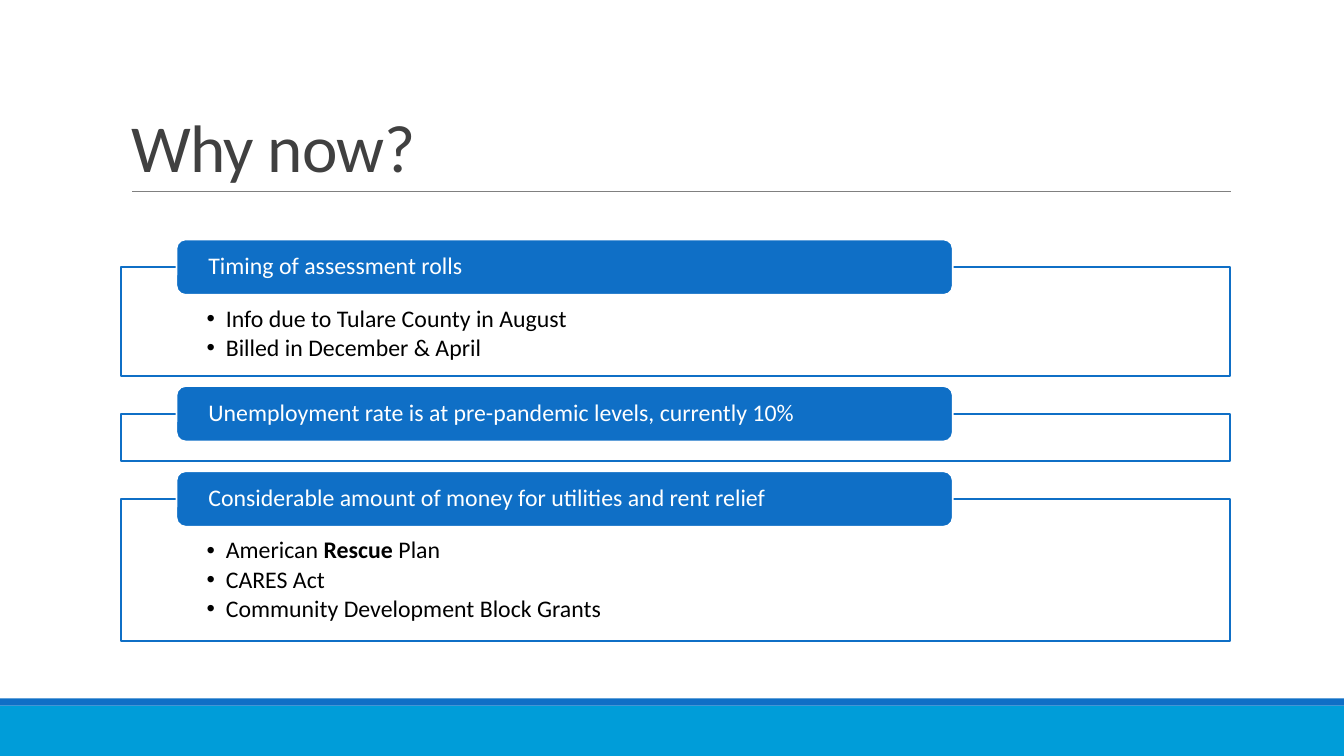
from lxml import etree
from pptx import Presentation
from pptx.dml.color import RGBColor
from pptx.enum.shapes import MSO_CONNECTOR, MSO_SHAPE
from pptx.enum.text import MSO_ANCHOR, MSO_AUTO_SIZE, PP_ALIGN
from pptx.oxml.ns import qn
from pptx.util import Inches, Pt

RECT, ROUND = MSO_SHAPE.RECTANGLE, MSO_SHAPE.ROUNDED_RECTANGLE
TOP, MIDDLE, BOTTOM = MSO_ANCHOR.TOP, MSO_ANCHOR.MIDDLE, MSO_ANCHOR.BOTTOM
LEFT = PP_ALIGN.LEFT

# Content: heading, frame height, bullets (text between asterisks is bold)
TITLE = "Why now?"
SECTIONS = [
    ("Timing of assessment rolls", 1.08,
     ["Info due to Tulare County in August", "Billed in December & April"]),
    ("Unemployment rate is at pre-pandemic levels, currently 10%", 0.47, []),
    ("Considerable amount of money for utilities and rent relief", 1.41,
     ["American *Rescue* Plan", "CARES Act",
      "Community Development Block Grants"]),
]
FONT = "Calibri"
BLUE, CYAN, WHITE, BLACK = "0F6FC6", "009DD9", "FFFFFF", "000000"
DARK, GRAY = "404040", "808080"

# Layout in inches
FRAME_X, FRAME_W, FIRST_Y = 1.2, 11, 2.65
HEAD_X, HEAD_W, HEAD_H = 1.75, 7.7, 0.55
GAP = 0.1
BULLET_INDENT = 0.19


def rgb(value):
    return RGBColor.from_string(value)


def add_box(kind, x, y, w, h, fill, line=None):
    sp = s.shapes.add_shape(kind, Inches(x), Inches(y), Inches(w), Inches(h))
    sp.shadow.inherit = False
    sp.fill.solid()
    sp.fill.fore_color.rgb = rgb(fill)
    if line:
        sp.line.color.rgb = rgb(line)
        sp.line.width = Pt(1.25)
    else:
        sp.line.fill.background()
    return sp


def set_frame(tf, anchor, left, top, right, bottom):
    tf.word_wrap = True
    tf.auto_size = MSO_AUTO_SIZE.NONE
    tf.vertical_anchor = anchor
    tf.margin_left, tf.margin_top = Inches(left), Inches(top)
    tf.margin_right, tf.margin_bottom = Inches(right), Inches(bottom)


def format_paragraph(p, size, color, spacing, after=0):
    p.alignment = LEFT
    p.line_spacing = spacing
    p.space_after = Pt(after)
    for r in p.runs:
        r.font.size = Pt(size)
        r.font.name = FONT
        r.font.color.rgb = rgb(color)


def add_bullet(p):
    pPr = p._p.get_or_add_pPr()
    pPr.set("marL", str(Inches(BULLET_INDENT)))
    pPr.set("indent", str(-Inches(BULLET_INDENT)))
    etree.SubElement(pPr, qn("a:buFont")).set("typeface", "Arial")
    etree.SubElement(pPr, qn("a:buChar")).set("char", "•")


prs = Presentation()
prs.slide_width, prs.slide_height = Inches(13.33), Inches(7.5)
s = prs.slides.add_slide(prs.slide_layouts[5])

# Footer bands
add_box(RECT, 0, 7, 13.33, 0.5, CYAN)
add_box(RECT, 0, 6.93, 13.33, 0.07, BLUE)

# Title and its rule
title = s.shapes.title
title.left, title.top = Inches(1.2), Inches(0.31)
title.width, title.height = Inches(11), Inches(1.59)
tf = title.text_frame
tf.text = TITLE
set_frame(tf, BOTTOM, 0.1, 0.05, 0.1, 0.05)
format_paragraph(tf.paragraphs[0], 48, DARK, 0.85)
tf.paragraphs[0].runs[0].font._element.set("spc", "-50")

rule = s.shapes.add_connector(MSO_CONNECTOR.STRAIGHT, Inches(1.31),
                              Inches(1.9), Inches(12.21), Inches(1.9))
rule.line.color.rgb = rgb(GRAY)
rule.line.width = Pt(0.5)
etree.SubElement(rule._element.spPr, qn("a:effectLst"))

# Sections: each heading straddles the top edge of its frame
y = FIRST_Y
for heading, height, bullets in SECTIONS:
    frame = add_box(RECT, FRAME_X, y, FRAME_W, height, WHITE, BLUE)
    color = frame.fill._xPr.find(qn("a:solidFill"))[0]
    etree.SubElement(color, qn("a:alpha")).set("val", "90000")
    tf = frame.text_frame
    set_frame(tf, TOP, 0.85, 0.39, 0.85, 0.13)
    for i, bullet in enumerate(bullets):
        p = tf.add_paragraph() if i else tf.paragraphs[0]
        for j, part in enumerate(bullet.split("*")):
            r = p.add_run()
            r.text = part
            r.font.bold = j % 2 == 1
        format_paragraph(p, 17, BLACK, 0.9, 2.5)
        add_bullet(p)

    head = add_box(ROUND, HEAD_X, y - HEAD_H / 2, HEAD_W, HEAD_H, BLUE, WHITE)
    tf = head.text_frame
    tf.text = heading
    set_frame(tf, MIDDLE, 0.29, 0, 0.29, 0)
    format_paragraph(tf.paragraphs[0], 17, WHITE, 0.9)
    y += height + GAP + HEAD_H / 2

prs.save("out.pptx")
